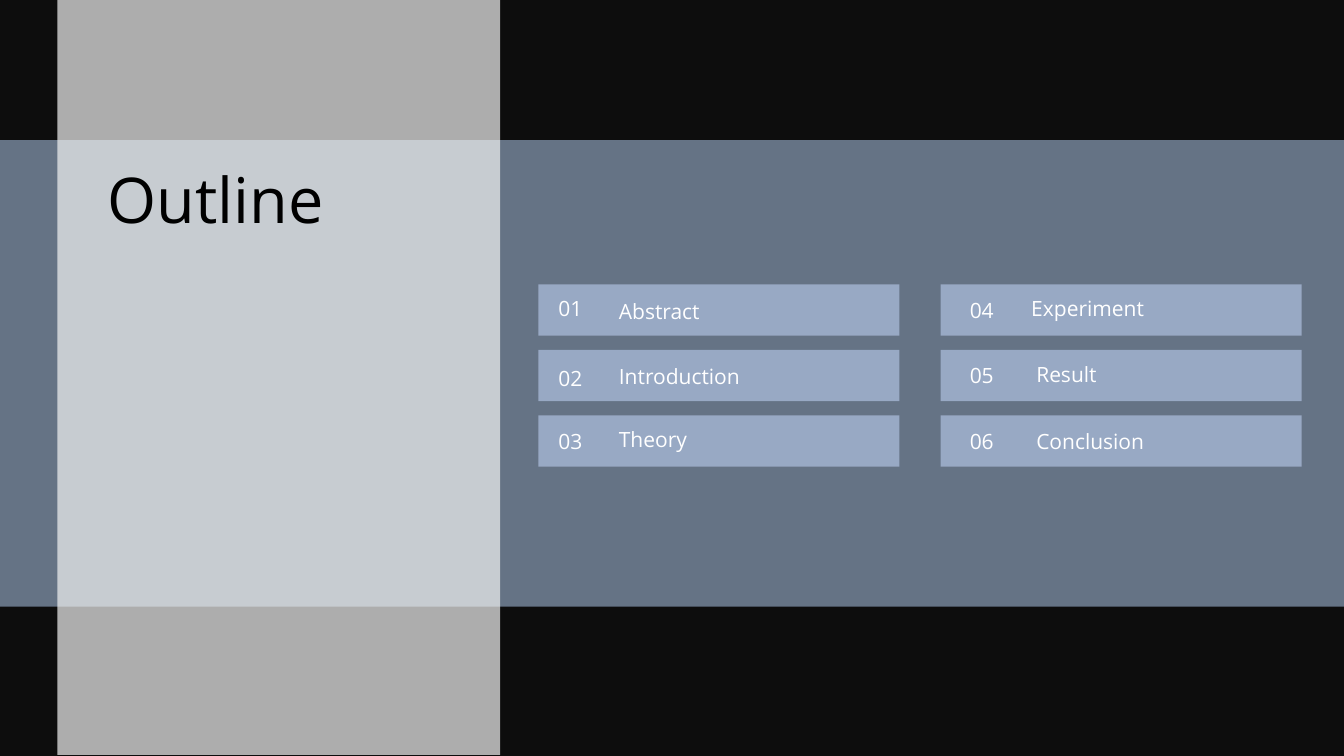
from dataclasses import dataclass

from lxml import etree
from pptx import Presentation
from pptx.dml.color import RGBColor
from pptx.enum import shapes, text
from pptx.oxml import ns
from pptx.util import Inches, Pt


@dataclass(frozen=True)
class Theme:
    background: str = "0D0D0D"
    band: str = "8497B0"
    panel: str = "F2F2F2"
    card: str = "B4C7E7"
    title: str = "000000"
    label: str = "FFFFFF"
    font: str = "Open Sans"
    title_size: int = 45
    label_size: int = 15


THEME = Theme()

# Number, label, then the offsets within the card:
# number left, number top, label left, label top
COLUMNS = [
    [
        ("01", "Abstract", 0.10, 0.06, 0.70, 0.09),
        ("02", "Introduction", 0.10, 0.11, 0.70, 0.09),
        ("03", "Theory", 0.10, 0.08, 0.70, 0.06),
    ],
    [
        ("04", "Experiment", 0.19, 0.08, 0.80, 0.06),
        ("05", "Result", 0.19, 0.08, 0.85, 0.07),
        ("06", "Conclusion", 0.19, 0.08, 0.85, 0.08),
    ],
]


def place(shape, left, top, width, height):
    shape.left, shape.top = Inches(left), Inches(top)
    shape.width, shape.height = Inches(width), Inches(height)


def add_pane(slide, box, color, opacity):
    """Add a borderless rectangle with an opacity in percent."""
    pane = slide.shapes.add_shape(
        shapes.MSO_SHAPE.RECTANGLE, *(Inches(length) for length in box)
    )
    pane.shadow.inherit = False
    pane.line.fill.background()
    pane.fill.solid()
    pane.fill.fore_color.rgb = RGBColor.from_string(color)
    color_element = pane.fill._xPr.find(".//" + ns.qn("a:srgbClr"))
    etree.SubElement(color_element, ns.qn("a:alpha"), val=str(opacity * 1000))


def write(shape, words, *, size, color, line_spacing=None):
    frame = shape.text_frame
    frame.word_wrap = True
    frame.auto_size = text.MSO_AUTO_SIZE.SHAPE_TO_FIT_TEXT
    frame.vertical_anchor = text.MSO_ANCHOR.TOP
    paragraph = frame.paragraphs[0]
    paragraph.alignment = text.PP_ALIGN.LEFT
    if line_spacing:
        paragraph.line_spacing = Pt(line_spacing)
    run = paragraph.add_run()
    run.text = words
    run.font.name = THEME.font
    run.font.size = Pt(size)
    run.font.color.rgb = RGBColor.from_string(color)


def add_label(slide, words, left, top, width):
    label = slide.shapes.add_textbox(0, 0, 0, 0)
    write(label, words, size=THEME.label_size, color=THEME.label)
    place(label, left, top, width, 0.35)


def add_title_panel(slide, box):
    left, top, _, _ = box
    add_pane(slide, box, THEME.panel, 70)
    title = slide.shapes.title
    place(title, left + 0.4, top + 1.68, 2.83, 0.73)
    write(title, "Outline", size=THEME.title_size, color=THEME.title,
          line_spacing=THEME.title_size)
    # Bring the title in front of the panel
    slide.shapes._spTree.append(title._element)


def add_card(slide, box, item):
    left, top, _, _ = box
    number, label, number_left, number_top, label_left, label_top = item
    add_pane(slide, box, THEME.card, 65)
    add_label(slide, number, left + number_left, top + number_top, 0.56)
    add_label(slide, label, left + label_left, top + label_top, 2.64)


def add_contents(slide, box):
    """Fill the box with a grid of cards."""
    left, top, width, height = box
    card_width, card_height = 3.58, 0.51
    column_step = (width - card_width) / (len(COLUMNS) - 1)
    row_step = (height - card_height) / (len(COLUMNS[0]) - 1)
    for column, items in enumerate(COLUMNS):
        for row, item in enumerate(items):
            card_box = (left + column * column_step, top + row * row_step,
                        card_width, card_height)
            add_card(slide, card_box, item)


def build_outline(presentation):
    slide = presentation.slides.add_slide(presentation.slide_layouts[5])
    slide.background.fill.solid()
    slide.background.fill.fore_color.rgb = RGBColor.from_string(THEME.background)
    # Horizontal band, title panel and contents
    add_pane(slide, (0, 1.39, 13.33, 4.63), THEME.band, 74)
    add_title_panel(slide, (0.57, -0.01, 4.39, 7.5))
    add_contents(slide, (5.34, 2.82, 7.57, 1.81))


def main():
    presentation = Presentation()
    presentation.slide_width = Inches(13.33)
    presentation.slide_height = Inches(7.5)
    build_outline(presentation)
    presentation.save("out.pptx")


if __name__ == "__main__":
    main()
